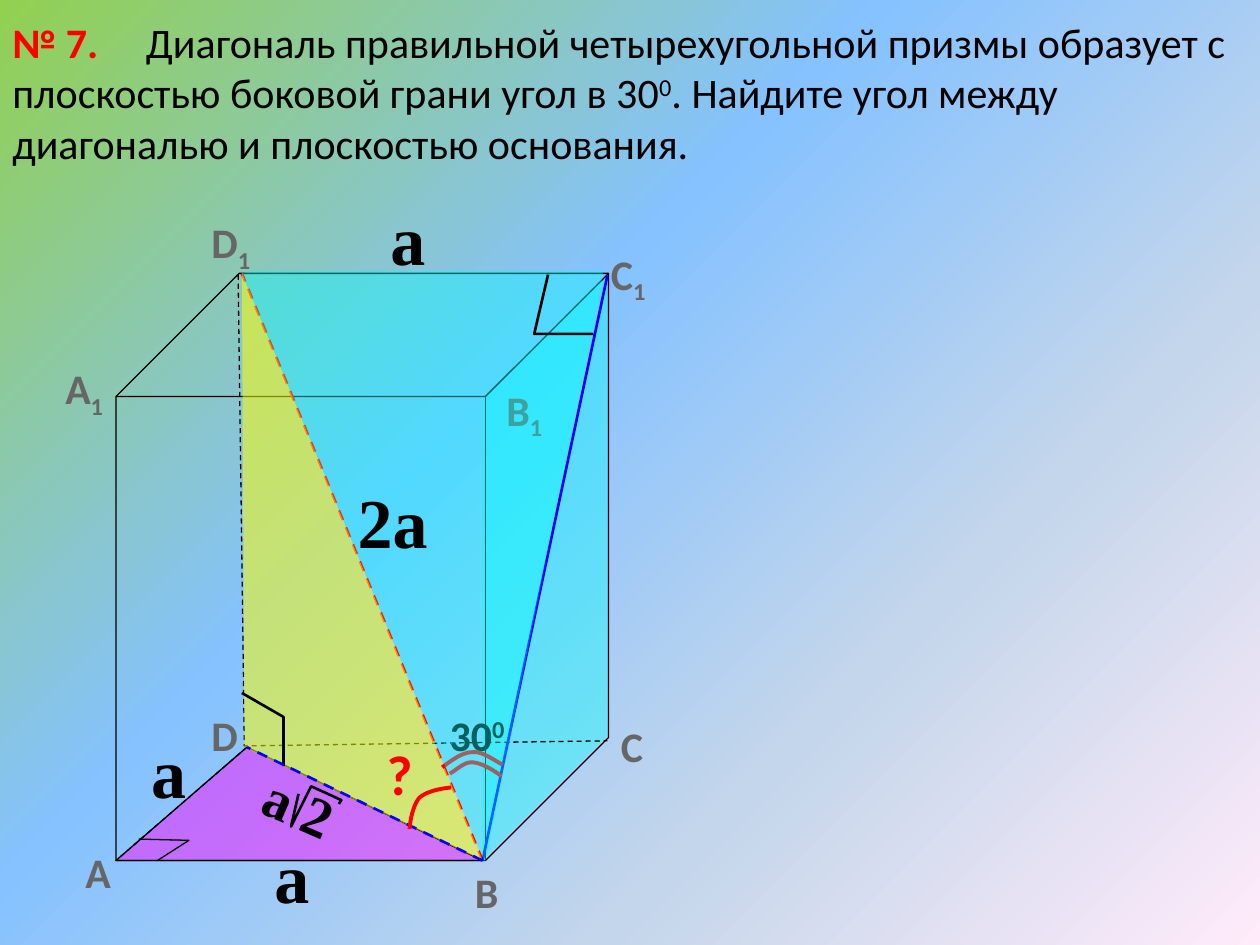
from lxml import etree
from pptx import Presentation, util as u
from pptx.dml import color
from pptx.enum import dml, shapes, text
from pptx.oxml import ns

THEME = {
    "sans": "Calibri", "serif": "Times New Roman",
    "black": "000000", "grey": "666666", "red": "FF0000", "blue": "0000FF",
    "cyan": "00FFFF", "yellow": "FFFF00", "magenta": "FF00FF",
    "body": 24, "angle": 32, "side": 40,
    "thin": 0.75, "bold": 1.5, "arc": 2.25,
    "sub": -25, "sup": 30,
    "background": [(0, "92D050"), (40, "85C2FF"), (70, "C4D6EB"), (100, "FFEBFA")],
}

# Prism vertices: front face, then back face shifted by the depth
A, B, A1, B1 = (0.92, 6.83), (3.83, 6.83), (0.92, 3.17), (3.83, 3.17)
C, C1, D1 = (4.83, 5.83), (4.83, 2.17), (1.92, 2.17)
D = (1.96, 5.93)

# Text formats
VERTEX = dict(width=0.67, ink="grey")
SIDE = dict(width=0.48, height=0.77, font="serif", size="side", wrap=False)

# Content from back to front: (kind, what, format)
CONTENT = [
    ("face", [B, C, C1, B1], dict(ink="cyan", alpha=38)),
    ("text", [("Диагональ правильной четырехугольной призмы образует с плоскостью "
               "боковой грани угол в 30", None), ("0", "sup"),
              (". Найдите угол между диагональю и плоскостью основания.", None)],
     dict(left=0, top=0.08, width=10, height=1.3, bold=False, indent=1.06)),
    ("text", [("№ 7.", None)],
     dict(left=0, top=0.08, width=0.89, ink="red", wrap=False)),
    ("face", [B, D, A], dict(ink="magenta", alpha=45, outline="black")),
    ("prism", (A, C1), dict(ink="black")),
    ("path", [(1.89, 2.18), (1.94, 5.92), (4.82, 5.88)], dict(dash=True)),
    ("text", [("В", None)], dict(left=3.67, top=6.83, **VERTEX)),
    ("text", [("С", None)], dict(left=4.83, top=5.67, **VERTEX)),
    ("text", [("А", None), ("1", "sub")], dict(left=0.42, top=2.83, **VERTEX)),
    ("text", [("D", None), ("1", "sub")], dict(left=1.58, top=1.67, **VERTEX)),
    ("text", [("С", None), ("1", "sub")], dict(left=4.75, top=1.92, **VERTEX)),
    ("text", [("В", None), ("1", "sub")], dict(left=3.92, top=3, **VERTEX)),
    # Diagonal and its triangle with the base
    ("segment", (B, D1), dict(ink="red", weight="bold", dash=True)),
    ("face", [B, (1.94, 5.93), D1], dict(ink="yellow", alpha=52)),
    ("segment", (D, A), dict(dash=True)),
    ("text", [("D", None)], dict(left=1.58, top=5.58, **VERTEX)),
    ("text", [("А", None)], dict(left=0.58, top=6.67, **VERTEX)),
    ("segment", (B, (4.82, 2.19)), dict(ink="blue", weight="bold")),
    # Right angles at A and D
    ("path", [(1.1, 6.66), (1.5, 6.67), (1.25, 6.83)], {}),
    ("path", [(1.92, 5.5), (2.25, 5.69), (2.25, 6.08)], dict(weight="bold")),
    # Unknown angle
    ("segment", (B, D), dict(ink="blue", weight="bold", dash=True)),
    ("curve", [(3.58, 6.25), (3.49, 6.26), (3.39, 6.28), (3.33, 6.33),
               (3.28, 6.39), (3.26, 6.49), (3.25, 6.58)], dict(ink="red", weight="arc")),
    ("text", [("?", None)], dict(left=2.97, top=5.82, width=0.47, height=0.63,
                                 size="angle", ink="red", wrap=False)),
    # Given angle
    ("text", [("30", None), ("0", "sup")], dict(left=3.47, top=5.58, width=0.7, wrap=False)),
    ("curve", [(3.99, 6.07), (3.9, 6.02), (3.82, 5.96), (3.75, 5.97),
               (3.67, 5.97), (3.59, 6.03), (3.51, 6.09)], dict(ink="red", weight="arc")),
    ("curve", [(3.98, 6.16), (3.9, 6.1), (3.81, 6.05), (3.74, 6.05),
               (3.68, 6.05), (3.61, 6.12), (3.57, 6.14)], dict(ink="red", weight="arc")),
    # Lengths, with the section A-B-C1-D1 between them
    ("text", [("a", None)], dict(left=1.1, top=5.73, **SIDE)),
    ("text", [("a", None)], dict(left=2.08, top=6.57, **SIDE)),
    ("face", [(3.85, 6.85), (4.79, 2.15), (1.99, 2.15), D1], dict(ink="cyan", alpha=38)),
    ("path", [(4.71, 2.65), (4.24, 2.65), (4.35, 2.18)], dict(weight="bold")),
    ("text", [("a", None)], dict(left=3, top=1.5, **SIDE)),
    ("text", [("2a", None)], dict(left=2.74, top=3.75, **{**SIDE, "width": 0.76})),
    ("text", [("a 2", None)], dict(left=2, top=6.08, width=0.76, height=0.63, font="serif",
                                   size="angle", wrap=False, turn=23.5)),
    ("path", [(2.37, 6.3), (2.31, 6.56), (2.47, 6.24), (2.71, 6.35), (2.69, 6.38)],
     dict(weight="bold")),
]


def rgb(ink):
    return color.RGBColor.from_string(THEME[ink])


def set_line(part, ink="black", weight="thin", dash=False):
    part.line.color.rgb = rgb(ink)
    part.line.width = u.Pt(THEME[weight])
    if dash:
        part.line.dash_style = dml.MSO_LINE.DASH


def outline_shape(canvas, points, close):
    corners = [(u.Inches(x), u.Inches(y)) for x, y in points]
    builder = canvas.build_freeform(*corners[0])
    builder.add_line_segments(corners[1:], close=close)
    figure = builder.convert_to_shape()
    figure.shadow.inherit = False
    return figure


def add_face(canvas, points, ink, alpha, outline=None):
    face = outline_shape(canvas, points, True)
    face.fill.solid()
    face.fill.fore_color.rgb = rgb(ink)
    tint = face.fill._xPr.find(".//" + ns.qn("a:srgbClr"))
    etree.SubElement(tint, ns.qn("a:alpha"), val=str(alpha * 1000))
    if outline:
        set_line(face, outline)
    else:
        face.line.fill.background()


def add_path(canvas, points, **line):
    path = outline_shape(canvas, points, False)
    path.fill.background()
    set_line(path, **line)


def add_curve(canvas, controls, steps=10, **line):
    """Draw chained cubic Bezier arcs as a fine polyline."""
    points = [controls[0]]
    for first in range(0, len(controls) - 1, 3):
        arc = controls[first:first + 4]
        for step in range(1, steps + 1):
            t = step / steps
            weights = ((1 - t) ** 3, 3 * t * (1 - t) ** 2, 3 * t * t * (1 - t), t ** 3)
            points.append(tuple(sum(w * p[axis] for w, p in zip(weights, arc))
                                for axis in (0, 1)))
    add_path(canvas, points, **line)


def add_segment(canvas, ends, **line):
    start, end = ends
    segment = canvas.add_connector(shapes.MSO_CONNECTOR.STRAIGHT,
                                   *map(u.Inches, start + end))
    set_line(segment, **line)
    etree.SubElement(segment._element.spPr, ns.qn("a:effectLst"))


def add_prism(canvas, corners, ink):
    (left, bottom), (right, top) = corners
    prism = canvas.add_shape(shapes.MSO_SHAPE.CUBE,
                             *map(u.Inches, (left, top, right - left, bottom - top)))
    prism.adjustments[0] = 0.25
    prism.shadow.inherit = False
    prism.fill.background()
    set_line(prism, ink)


def add_text(canvas, runs, left, top, width, height=0.5, font="sans", size="body",
             ink="black", bold=True, wrap=True, indent=0, turn=0):
    box = canvas.add_textbox(*map(u.Inches, (left, top, width, height)))
    box.rotation = turn
    frame = box.text_frame
    frame.word_wrap = wrap
    frame.auto_size = text.MSO_AUTO_SIZE.SHAPE_TO_FIT_TEXT
    paragraph = frame.paragraphs[0]
    if indent:
        paragraph._p.get_or_add_pPr().set("indent", str(u.Inches(indent)))
    for words, shift in runs:
        run = paragraph.add_run()
        run.text = words
        run.font.name, run.font.size = THEME[font], u.Pt(THEME[size])
        run.font.bold, run.font.color.rgb = bold, rgb(ink)
        if shift:
            run.font._element.set("baseline", str(THEME[shift] * 1000))


def set_background(slide):
    fill = slide.background.fill
    fill.gradient()
    gradient = fill._xPr.find(ns.qn("a:gradFill"))
    stops = gradient.find(ns.qn("a:gsLst"))
    for stop in list(stops):
        stops.remove(stop)
    for position, tint in THEME["background"]:
        stop = etree.SubElement(stops, ns.qn("a:gs"), pos=str(position * 1000))
        etree.SubElement(stop, ns.qn("a:srgbClr"), val=tint)
    direction = gradient.find(ns.qn("a:lin"))
    direction.set("ang", str(45 * 60000))
    direction.set("scaled", "0")


def main():
    deck = Presentation()
    deck.slide_width, deck.slide_height = u.Inches(10), u.Inches(7.5)
    slide = deck.slides.add_slide(deck.slide_layouts[6])
    set_background(slide)
    draw = {"face": add_face, "path": add_path, "curve": add_curve,
            "segment": add_segment, "prism": add_prism, "text": add_text}
    for kind, what, look in CONTENT:
        draw[kind](slide.shapes, what, **look)
    deck.save("out.pptx")


if __name__ == "__main__":
    main()
